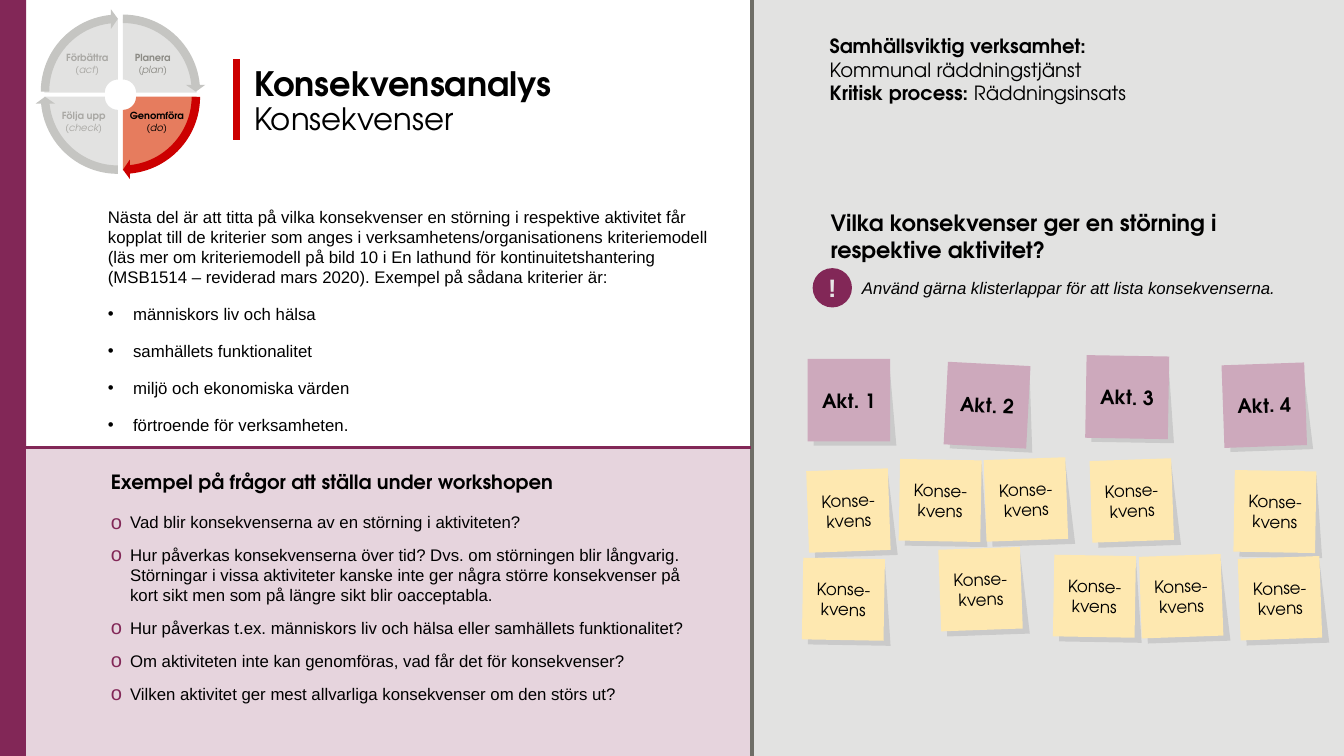
from dataclasses import dataclass
from math import cos, pi, sin

from lxml import etree
from pptx import Presentation
from pptx.dml.color import RGBColor
from pptx.enum.shapes import MSO_CONNECTOR, MSO_SHAPE
from pptx.enum.text import MSO_ANCHOR, MSO_AUTO_SIZE, PP_ALIGN
from pptx.oxml.ns import qn
from pptx.util import Inches, Pt

RECT, OVAL, ARROW = MSO_SHAPE.RECTANGLE, MSO_SHAPE.OVAL, MSO_SHAPE.CIRCULAR_ARROW
LEFT, MID = PP_ALIGN.LEFT, PP_ALIGN.CENTER
TOP, CENTRE = MSO_ANCHOR.TOP, MSO_ANCHOR.MIDDLE
HEAD, BODY = "TeX Gyre Adventor", "Arial"
PLUM, RED, GREY, BLACK = "822757", "CC0000", "E2E2E1", "000000"


@dataclass
class Run:
    text: str
    bold: bool | None = None
    italic: bool | None = None
    size: float | None = None


@dataclass
class Bullet:
    char: str
    indent: float
    color: str = BLACK
    scale: int = 100


@dataclass
class Style:
    size: float
    font: str = HEAD
    color: str = BLACK
    bold: bool = False
    italic: bool = False
    align: PP_ALIGN = LEFT
    after: float = 0
    line: float = 1.0


@dataclass
class Note:
    left: float
    top: float
    tilt: float
    text: str = "Konse-\nkvens"


@dataclass
class Phase:
    name: str
    term: str
    color: str
    left: float
    top: float
    width: float


@dataclass
class Turn:
    left: float
    top: float
    end: float
    start: float
    color: str = "C5C5C2"


prs = Presentation()
prs.slide_width, prs.slide_height = Inches(13.33), Inches(7.5)
slide = prs.slides.add_slide(prs.slide_layouts[3])
title, intro, asks = slide.placeholders
shapes = slide.shapes


def rgb(code: str) -> RGBColor:
    return RGBColor.from_string(code)


def place(shape, *box: float) -> None:
    """Move a placeholder to its box, in front of what is drawn so far."""
    shape.left, shape.top, shape.width, shape.height = map(Inches, box)
    shape._element.getparent().append(shape._element)


def paint(shape, color: str) -> None:
    shape.fill.solid()
    shape.fill.fore_color.rgb = rgb(color)
    shape.line.fill.background()
    shape.shadow.inherit = False


def block(kind: MSO_SHAPE, color: str, *box: float):
    shape = shapes.add_shape(kind, *map(Inches, box))
    paint(shape, color)
    return shape


def rule(color: str, width: float, *ends: float) -> None:
    line = shapes.add_connector(MSO_CONNECTOR.STRAIGHT, *map(Inches, ends))
    line.line.color.rgb = rgb(color)
    line.line.width = Pt(width)
    etree.SubElement(line._element.spPr, qn("a:effectLst"))


def outline(points: list[tuple[float, float]], color: str):
    first, *rest = [(Inches(x), Inches(y)) for x, y in points]
    path = shapes.build_freeform(*first, scale=1.0)
    path.add_line_segments(rest, close=True)
    shape = path.convert_to_shape()
    paint(shape, color)
    return shape


def mark(para, bullet: Bullet | None) -> None:
    props = para._p.get_or_add_pPr()
    indent = Inches(bullet.indent) if bullet else 0
    props.set("marL", str(indent))
    props.set("indent", str(-indent))
    if not bullet:
        etree.SubElement(props, qn("a:buNone"))
        return
    tint = etree.SubElement(props, qn("a:buClr"))
    etree.SubElement(tint, qn("a:srgbClr"), val=bullet.color)
    etree.SubElement(props, qn("a:buSzPct"), val=str(bullet.scale * 1000))
    etree.SubElement(props, qn("a:buFont"), typeface=BODY)
    etree.SubElement(props, qn("a:buChar"), char=bullet.char)


def write(shape, paras: list[list[Run]], style: Style, anchor=TOP, wrap: bool = True,
          bullet: Bullet | None = None, plain: int = 0) -> None:
    """Fill a shape; the first `plain` paragraphs get no bullet."""
    frame = shape.text_frame
    frame.word_wrap, frame.auto_size = wrap, MSO_AUTO_SIZE.NONE
    frame.vertical_anchor = anchor
    for i, runs in enumerate(paras):
        para = frame.add_paragraph() if i else frame.paragraphs[0]
        mark(para, bullet if i >= plain else None)
        para.alignment, para.line_spacing = style.align, style.line
        para.space_before, para.space_after = Pt(0), Pt(style.after)
        font = para.font
        font.name, font.size = style.font, Pt(style.size)
        font.bold, font.italic = style.bold, style.italic
        font.color.rgb = rgb(style.color)
        for item in runs:
            for j, part in enumerate(item.text.split("\n")):
                if j:
                    para.add_line_break()
                if not part:
                    continue
                run = para.add_run()
                run.text = part
                run.font.bold, run.font.italic = item.bold, item.italic
                if item.size:
                    run.font.size = Pt(item.size)


def label(box: tuple, paras: list[list[Run]], style: Style, wrap: bool = True) -> None:
    write(shapes.add_textbox(*map(Inches, box)), paras, style, wrap=wrap)


def stick(note: Note, size: float, color: str, style: Style) -> None:
    x, y = note.left + 0.06, note.top + 0.04
    shade = outline([(x, y), (x + 0.75, y), (x + 0.82, y + 0.82), (x, y + 0.82)], BLACK)
    tone = shade._element.spPr.find(qn("a:solidFill"))[0]
    etree.SubElement(tone, qn("a:alpha"), val="10000")
    card = block(RECT, color, note.left, note.top, size, size)
    shade.rotation = card.rotation = note.tilt
    card.text_frame.margin_left = card.text_frame.margin_right = 0
    write(card, [[Run(note.text)]], style, CENTRE)


def sector(x: float, y: float, turn: int, color: str) -> None:
    """Quarter ring whose arcs are centred on (x, y)."""
    angles = [(turn + k / 24) * pi / 2 for k in range(25)]
    arcs = [(0.73, angles), (0.13, angles[::-1])]
    outline([(x + r * cos(a), y + r * sin(a)) for r, arc in arcs for a in arc], color)


# Panels
block(RECT, PLUM, 0, 0, 0.26, 7.5)
block(RECT, GREY, 7.45, 0, 5.88, 7.5)
block(RECT, "E6D4DD", 0.26, 4.44, 7.2, 3.06)
rule("6F6E67", 2.5, 7.46, 0, 7.46, 7.5)
rule(PLUM, 2.5, 0.26, 4.44, 7.45, 4.44)

# Title
place(title, 2.42, 0.6, 4.23, 0.83)
write(title, [[Run("Konsekvensanalys\n", True, size=24), Run("Konsekvenser")]],
      Style(22, line=0.9), CENTRE)
rule(RED, 5, 2.35, 0.59, 2.35, 1.39)

# Introduction and criteria
place(intro, 0.97, 2, 6.42, 2.59)
criteria = [
    "Nästa del är att titta på vilka konsekvenser en störning i respektive aktivitet får kopplat till de kriterier som anges i verksamhetens/organisationens kriteriemodell (läs mer om kriteriemodell på bild 10 i En lathund för kontinuitetshantering (MSB1514 – reviderad mars 2020). Exempel på sådana kriterier är:",
    "människors liv och hälsa", "samhällets funktionalitet",
    "miljö och ekonomiska värden", "förtroende för verksamheten."]
write(intro, [[Run(t)] for t in criteria], Style(12, BODY, after=12),
      bullet=Bullet("•", 0.25), plain=1)

# Workshop questions
label((1, 4.61, 4.65, 0.34), [[Run("Exempel på frågor att ställa under workshopen")]],
      Style(14, bold=True), wrap=False)
place(asks, 1, 5.03, 6.11, 2.02)
queries = [
    "Vad blir konsekvenserna av en störning i aktiviteten?",
    "Hur påverkas konsekvenserna över tid? Dvs. om störningen blir långvarig. Störningar i vissa aktiviteter kanske inte ger några större konsekvenser på kort sikt men som på längre sikt blir oacceptabla.",
    "Hur påverkas t.ex. människors liv och hälsa eller samhällets funktionalitet?",
    "Om aktiviteten inte kan genomföras, vad får det för konsekvenser?",
    "Vilken aktivitet ger mest allvarliga konsekvenser om den störs ut?"]
write(asks, [[Run(t)] for t in queries], Style(12, BODY, after=9),
      bullet=Bullet("o", 0.19, PLUM, 120))

# Right panel texts
label((8.13, 0.29, 3.97, 0.81),
      [[Run("Samhällsviktig verksamhet:\n", True), Run("Kommunal räddningstjänst\n"),
        Run("Kritisk process: ", True), Run("Räddningsinsats")]], Style(14))
label((8.14, 2.03, 4.4, 0.64),
      [[Run("Vilka konsekvenser ger en störning i respektive aktivitet?")]],
      Style(16, bold=True))
label((8.45, 2.71, 4.88, 0.3),
      [[Run("Använd gärna klisterlappar för att lista konsekvenserna.")]],
      Style(12, BODY, italic=True))
alert = block(OVAL, PLUM, 8.06, 2.66, 0.39, 0.39)
rim = alert.text_frame
rim.margin_left = rim.margin_right = rim.margin_top = rim.margin_bottom = 0
write(alert, [[Run("!")]], Style(18, BODY, "E7E6E6", True, align=MID), CENTRE)

# Sticky notes
for note in [Note(8.01, 4.66, -2), Note(7.96, 5.54, 1), Note(10.82, 4.56, -2),
             Note(10.45, 5.51, 1), Note(11.31, 5.51, -2), Note(12.24, 4.67, 1),
             Note(12.29, 5.53, -2), Note(8.92, 4.56, 1), Note(9.77, 4.55, -2),
             Note(9.32, 5.44, -2)]:
    stick(note, 0.81, "FEE8B0", Style(12, align=MID))
for note in [Note(8.01, 3.56, 0, "Akt. 1"), Note(9.38, 3.61, 3, "Akt. 2"),
             Note(10.77, 3.53, 1, "Akt. 3"), Note(12.13, 3.61, -2, "Akt. 4")]:
    stick(note, 0.82, "CDA9BC", Style(14, bold=True, align=MID))

# Cycle wheel
for turn, (x, y) in enumerate([(1.22, 0.96), (1.17, 0.96), (1.17, 0.92), (1.22, 0.92)]):
    sector(x, y, turn, GREY if turn else "E67C5E")
for arc in [Turn(0.4, 0.09, 212.725, 162), Turn(0.4, 0.14, 50.725, 0, RED),
            Turn(0.35, 0.14, 104.725, 54), Turn(0.35, 0.09, 158.725, 108)]:
    arrow = block(ARROW, arc.color, arc.left, arc.top, 1.64, 1.64)
    for i, value in enumerate([0.051, 3.275, arc.end, arc.start, 0.059]):
        arrow.adjustments[i] = value
for phase in [Phase("Förbättra", "(act)", "A9A8A4", 0.55, 0.48, 0.63),
              Phase("Följa upp", "(check)", "A9A8A4", 0.51, 1.05, 0.64),
              Phase("Genomföra", "(do)", BLACK, 1.18, 1.05, 0.75),
              Phase("Planera", "(plan)", "8C8B85", 1.15, 0.48, 0.73)]:
    label((phase.left, phase.top, phase.width, 0.33),
          [[Run(phase.name, True)], [Run(phase.term, italic=True)]],
          Style(7, color=phase.color, align=MID, after=1, line=0.9), wrap=False)

prs.save("out.pptx")
